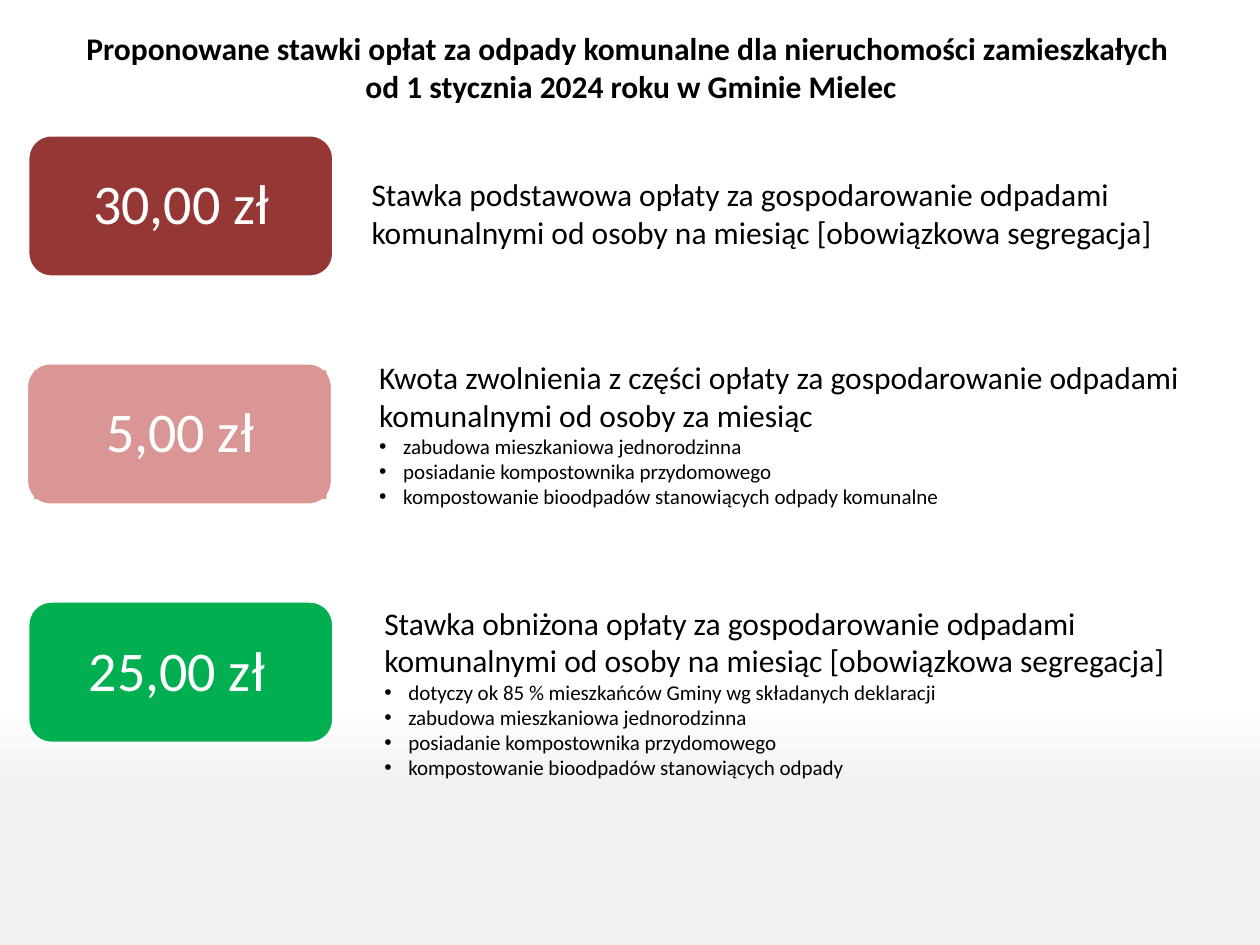
from copy import deepcopy
from dataclasses import dataclass

from lxml import etree
from pptx import Presentation
from pptx.dml.color import RGBColor
from pptx.enum.shapes import MSO_SHAPE
from pptx.enum.text import MSO_ANCHOR, MSO_AUTO_SIZE, PP_ALIGN
from pptx.oxml.ns import qn
from pptx.util import Inches, Pt

ROUNDED = MSO_SHAPE.ROUNDED_RECTANGLE
LEFT, CENTER = PP_ALIGN.LEFT, PP_ALIGN.CENTER
TOP, MIDDLE = MSO_ANCHOR.TOP, MSO_ANCHOR.MIDDLE
GROW = MSO_AUTO_SIZE.SHAPE_TO_FIT_TEXT
TWO_CONTENT = 3


@dataclass(frozen=True)
class Theme:
    font: str = "Calibri"
    text: str = "000000"
    white: str = "FFFFFF"
    grey: str = "F2F2F2"
    basic: str = "953735"
    discount: str = "D99694"
    reduced: str = "00B050"
    heading: int = 18
    bullet: int = 12
    price: int = 32


THEME = Theme()


def color(value):
    return RGBColor.from_string(value)


def place(shape, left, top, width, height):
    shape.left, shape.top = Inches(left), Inches(top)
    shape.width, shape.height = Inches(width), Inches(height)


def write(para, text, size=THEME.heading, ink=THEME.text, bold=False,
          align=LEFT, spacing=1.0):
    para.alignment = align
    para.line_spacing = spacing
    para.space_before = para.space_after = Pt(0)
    span = para.add_run()
    span.text = text
    span.font.name = THEME.font
    span.font.size = Pt(size)
    span.font.bold = bold
    span.font.color.rgb = color(ink)


def set_bullet(para, bulleted):
    indent = Inches(0.19) if bulleted else 0
    properties = para._p.get_or_add_pPr()
    properties.set("marL", str(indent))
    properties.set("indent", str(-indent))
    if bulleted:
        font = etree.SubElement(properties, qn("a:buFont"))
        font.set("typeface", "Arial")
        etree.SubElement(properties, qn("a:buChar")).set("char", "•")
    else:
        etree.SubElement(properties, qn("a:buNone"))


def paint_background(slide):
    fill = slide.background.fill
    fill.gradient()
    fill.gradient_angle = 270
    stop_list = slide.element.xpath(".//a:gsLst")[0]
    for stop in list(stop_list)[:2]:
        stop_list.append(deepcopy(stop))
    stops = ((0, THEME.white), (0.74, THEME.white), (0.83, THEME.grey), (1, THEME.grey))
    for stop, (position, value) in zip(fill.gradient_stops, stops):
        stop.position = position
        stop.color.rgb = color(value)


def add_title(slide, lines):
    title = slide.shapes.title
    place(title, 0.57, 0.18, 8.88, 0.71)
    frame = title.text_frame
    frame.word_wrap = False
    frame.auto_size = GROW
    frame.vertical_anchor = TOP
    for index, line in enumerate(lines):
        para = frame.add_paragraph() if index else frame.paragraphs[0]
        write(para, line, bold=True, align=CENTER)


def fill_description(box, position, heading, bullets=()):
    place(box, *position)
    frame = box.text_frame
    frame.word_wrap = True
    frame.auto_size = GROW
    frame.vertical_anchor = TOP
    write(frame.paragraphs[0], heading)
    set_bullet(frame.paragraphs[0], False)
    for item in bullets:
        para = frame.add_paragraph()
        write(para, item, size=THEME.bullet)
        set_bullet(para, True)


def add_price(slide, text, fill, left, top, label_left, label_width, label_filled=True):
    group = slide.shapes.add_group_shape()
    card = group.shapes.add_shape(ROUNDED, Inches(left), Inches(top),
                                  Inches(2.43), Inches(1.13))
    card.shadow.inherit = False
    card.fill.solid()
    card.fill.fore_color.rgb = color(fill)
    card.line.color.rgb = color(THEME.white)
    card.line.width = Pt(2)

    label = group.shapes.add_textbox(Inches(label_left), Inches(top + 0.06),
                                     Inches(label_width), Inches(1.02))
    if label_filled:
        label.fill.solid()
        label.fill.fore_color.rgb = color(fill)
    frame = label.text_frame
    frame.word_wrap = True
    frame.vertical_anchor = MIDDLE
    frame.margin_left = frame.margin_right = Inches(0.07)
    frame.margin_top = frame.margin_bottom = Inches(0.07)
    write(frame.paragraphs[0], text, size=THEME.price, ink=THEME.white,
          align=CENTER, spacing=0.9)


def main():
    deck = Presentation()
    deck.slide_width, deck.slide_height = Inches(10), Inches(7.5)
    page = deck.slides.add_slide(deck.slide_layouts[TWO_CONTENT])
    paint_background(page)
    add_title(page, (
        "Proponowane stawki opłat za odpady komunalne dla nieruchomości zamieszkałych ",
        "od 1 stycznia 2024 roku w Gminie Mielec",
    ))

    add_price(page, "30,00 zł", THEME.basic, 0.22, 1.07, 0.28, 2.32, label_filled=False)
    add_price(page, "5,00 zł", THEME.discount, 0.21, 2.88, 0.27, 2.32)
    add_price(page, "25,00 zł", THEME.reduced, 0.22, 4.77, 0.33, 2.15)

    shared = ("zabudowa mieszkaniowa jednorodzinna", "posiadanie kompostownika przydomowego")
    composting = "kompostowanie bioodpadów stanowiących odpady"
    rate = "opłaty za gospodarowanie odpadami komunalnymi od osoby na miesiąc [obowiązkowa segregacja]"
    basic_box = page.shapes.add_textbox(0, 0, 0, 0)
    fill_description(basic_box, (2.85, 1.34, 7.09, 0.71), f"Stawka podstawowa {rate}")
    fill_description(
        page.placeholders[1], (2.91, 2.79, 7.09, 1.31),
        "Kwota zwolnienia z części opłaty za gospodarowanie odpadami "
        "komunalnymi od osoby za miesiąc",
        (*shared, f"{composting} komunalne"))
    fill_description(
        page.placeholders[2], (2.95, 4.74, 6.88, 1.51), f"Stawka obniżona {rate}",
        ("dotyczy ok 85 % mieszkańców Gminy wg składanych deklaracji", *shared, composting))
    deck.save("out.pptx")


if __name__ == "__main__":
    main()
